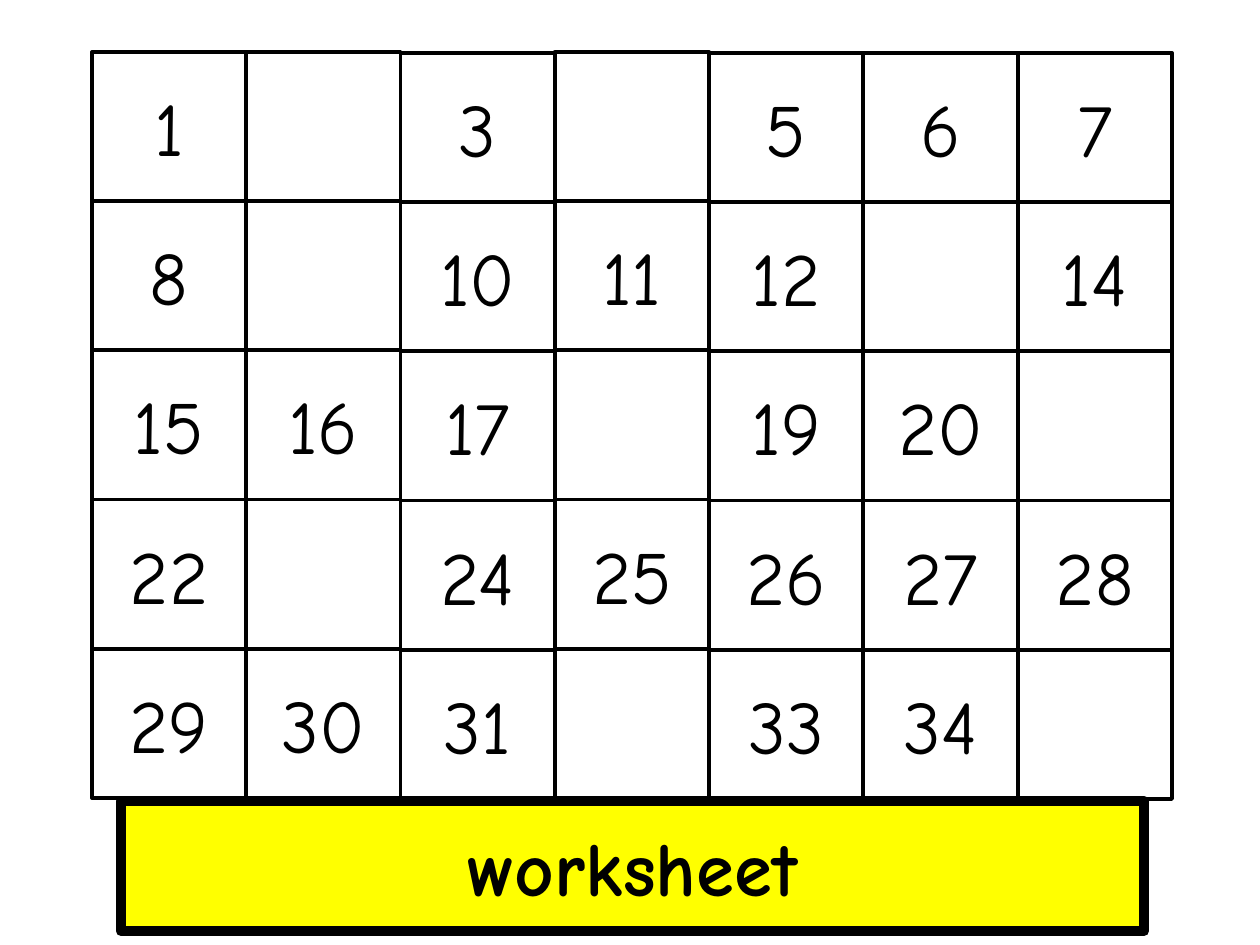
from lxml.etree import SubElement
from pptx import Presentation
from pptx.dml.color import RGBColor
from pptx.enum.shapes import MSO_SHAPE as Shape
from pptx.enum.text import MSO_ANCHOR as Anchor, PP_ALIGN as Align
from pptx.oxml.ns import qn
from pptx.util import Pt

PX = 914400 / 126
COLORS = {"ink": "000000", "paper": "FFFFFF", "banner": "FFFF00"}
FONT = "Comic Neue"
COLUMNS, ROWS = 7, 5
BLANKS = {2, 4, 9, 13, 18, 21, 23, 32, 35}
RAISED_COLUMNS = (0, 1, 3)
LOWERED_COLUMNS = (2, 4, 5, 6)
NUMBER_FORMAT = {"name": FONT, "size": Pt(42.9)}
BANNER_FORMAT = {"name": FONT, "size": Pt(44), "bold": True}
NUMBER_INSETS = {"margin_left": 9, "margin_right": 9, "margin_top": 5, "margin_bottom": 5}


def emu(px):
    return round(px * PX)


def color(name):
    return RGBColor.from_string(COLORS[name])


def add_box(page, area, fill, line_width):
    box = page.shapes.add_shape(Shape.RECTANGLE, *map(emu, area))
    box.shadow.inherit = False
    box.fill.solid()
    box.fill.fore_color.rgb = color(fill)
    box.line.color.rgb = color("ink")
    box.line.width = Pt(line_width)
    return box


def add_label(box, text, font_format):
    frame = box.text_frame
    frame.vertical_anchor = Anchor.MIDDLE
    para = frame.paragraphs[0]
    para.alignment = Align.CENTER
    span = para.add_run()
    span.text = text
    for name, value in font_format.items():
        setattr(span.font, name, value)
    span.font.color.rgb = color("ink")
    return span


def add_outline(span, width):
    properties = span.font._element
    outline = SubElement(properties, qn("a:ln"), w=str(Pt(width)))
    fill = SubElement(outline, qn("a:solidFill"))
    SubElement(fill, qn("a:srgbClr"), val=COLORS["ink"])
    properties.insert(0, outline)


def add_number_grid(page, left, top, width, height):
    pitch_x, pitch_y = width / COLUMNS, height / ROWS
    for row in range(ROWS):
        for column in RAISED_COLUMNS + LOWERED_COLUMNS:
            drop = 1 if column in LOWERED_COLUMNS else 0
            area = (left + column * pitch_x, top + row * pitch_y + drop, pitch_x, pitch_y)
            box = add_box(page, area, "paper", 2.25)
            number = row * COLUMNS + column + 1
            if number in BLANKS:
                continue
            for name, px in NUMBER_INSETS.items():
                setattr(box.text_frame, name, emu(px))
            add_outline(add_label(box, str(number), NUMBER_FORMAT), 0.75)


def add_banner(page, left, top, width, height):
    box = add_box(page, (left, top, width, height), "banner", 6)
    add_label(box, "worksheet", BANNER_FORMAT)


def main():
    deck = Presentation()
    deck.slide_width, deck.slide_height = emu(1260), emu(945)
    page = deck.slides.add_slide(deck.slide_layouts[6])
    add_number_grid(page, 92, 52, 1080, 746)
    add_banner(page, 121, 801, 1023, 130)
    deck.save("out.pptx")


if __name__ == "__main__":
    main()
